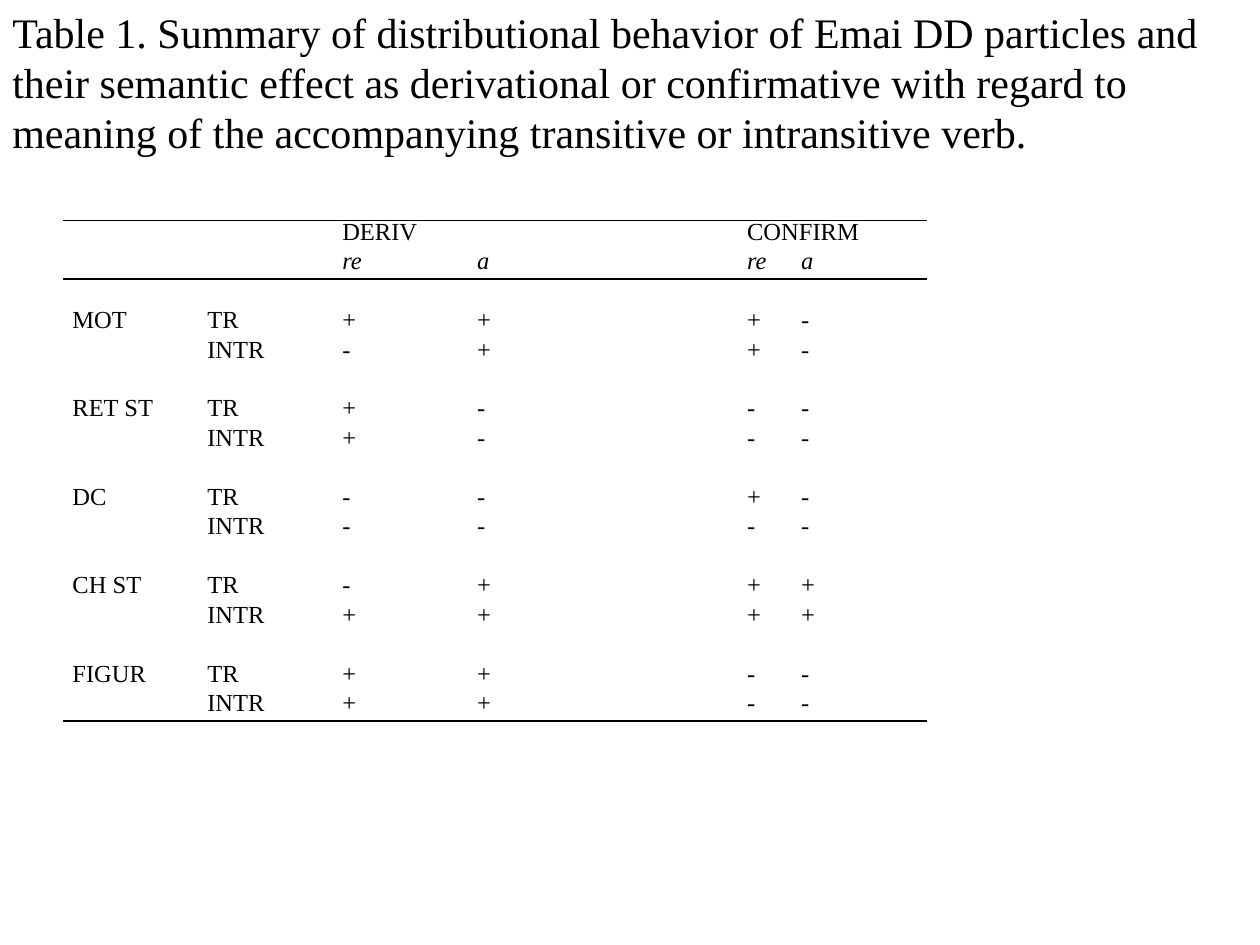
from dataclasses import dataclass

from lxml import etree
from pptx import Presentation
from pptx import util as u
from pptx.dml.color import RGBColor
from pptx.enum import text
from pptx.oxml.ns import qn


@dataclass(frozen=True)
class Theme:
    font: str = "Times New Roman"
    ink: str = "000000"
    paper: str = "FFFFFF"
    caption_size: u.Pt = u.Pt(24)
    table_size: u.Pt = u.Pt(14)
    table_spacing: float = 0.92
    rule_width: u.Pt = u.Pt(1)


@dataclass(frozen=True)
class VerbClass:
    name: str
    transitive: str    # marks in the order DERIV re, a, CONFIRM re, a
    intransitive: str


THEME = Theme()
CAPTION = (
    "Table 1. Summary of distributional behavior of Emai DD particles and "
    "their semantic effect as derivational or confirmative with regard to "
    "meaning of the accompanying transitive or intransitive verb."
)
VERB_CLASSES = [
    VerbClass("MOT", "+++-", "-++-"),
    VerbClass("RET ST", "+---", "+---"),
    VerbClass("DC", "--+-", "----"),
    VerbClass("CH ST", "-+++", "++++"),
    VerbClass("FIGUR", "++--", "++--"),
]
WIDE, NARROW, TABLE_HEIGHT = u.Cm(2.72), u.Cm(1.09), u.Cm(9.31)
COLUMN_WIDTHS = [WIDE] * 5 + [NARROW, WIDE]
NO_STYLE = "{2D5ABB26-0587-4C30-8999-92F81FD0307C}"
CELL_FORMAT = {
    "margin_left": u.Cm(0.19), "margin_right": u.Cm(0.19),
    "margin_top": 0, "margin_bottom": 0,
}


def table_rows() -> list[list[str]]:
    """Two heading rows, then a blank row and two rows for each verb class."""
    rows = [["", "", "DERIV", "", "", "CONFIRM", ""],
            ["", "", "re", "a", "", "re", "a"]]
    for verb in VERB_CLASSES:
        rows.append([""] * len(COLUMN_WIDTHS))
        for name, kind, marks in ((verb.name, "TR", verb.transitive),
                                  ("", "INTR", verb.intransitive)):
            rows.append([name, kind, *marks[:2], "", *marks[2:]])
    return rows


def write(para, words: str, size: u.Pt, italic: bool = False) -> None:
    if not words:  # an empty cell still needs the table's font and line height
        end = etree.SubElement(para._p, qn("a:endParaRPr"), sz=str(int(size.pt * 100)))
        etree.SubElement(end, qn("a:latin"), typeface=THEME.font)
        return
    span = para.add_run()
    span.text = words
    span.font.color.rgb = RGBColor.from_string(THEME.ink)
    for name, value in {"name": THEME.font, "size": size, "italic": italic}.items():
        setattr(span.font, name, value)


def rule(cell, side: str) -> None:
    """Draw a cell border; side is lnT or lnB."""
    line = etree.Element(qn(f"a:{side}"), w=str(int(THEME.rule_width)))
    fill = etree.SubElement(line, qn("a:solidFill"))
    etree.SubElement(fill, qn("a:srgbClr"), val=THEME.ink)
    cell._tc.get_or_add_tcPr().insert(0, line)


def add_caption(page) -> None:
    box = page.shapes.add_textbox(0, 0, u.Cm(25.4), u.Cm(19.05))
    frame = box.text_frame
    for name, value in {"word_wrap": True,
                        "vertical_anchor": text.MSO_ANCHOR.TOP}.items():
        setattr(frame, name, value)
    write(frame.paragraphs[0], CAPTION, THEME.caption_size)


def add_summary(page) -> None:
    rows = table_rows()
    holder = page.shapes.add_table(
        len(rows), len(COLUMN_WIDTHS), u.Cm(1.27), u.Cm(4.44),
        sum(COLUMN_WIDTHS), TABLE_HEIGHT)
    table = holder.table
    table.first_row = table.horz_banding = False
    next(table._tbl.iter(qn("a:tableStyleId"))).text = NO_STYLE
    for column, width in zip(table.columns, COLUMN_WIDTHS):
        column.width = width

    # Rules above and below the heading, and under the last row
    borders = {0: "lnT", 1: "lnB", len(rows) - 1: "lnB"}
    for r, words_in_row in enumerate(rows):
        table.rows[r].height = TABLE_HEIGHT // len(rows)
        for c, words in enumerate(words_in_row):
            cell = table.cell(r, c)
            for name, value in CELL_FORMAT.items():
                setattr(cell, name, value)
            cell.fill.background()
            para = cell.text_frame.paragraphs[0]
            para.line_spacing = THEME.table_spacing
            write(para, words, THEME.table_size, r == 1)
            if r in borders:
                rule(cell, borders[r])

    # DERIV and CONFIRM each head two columns
    for c in (2, 5):
        table.cell(0, c).merge(table.cell(0, c + 1))


def main() -> None:
    deck = Presentation()
    deck.slide_width, deck.slide_height = u.Cm(25.4), u.Cm(19.05)
    page = deck.slides.add_slide(deck.slide_layouts[6])
    background = page.background.fill
    background.solid()
    background.fore_color.rgb = RGBColor.from_string(THEME.paper)
    add_caption(page)
    add_summary(page)
    deck.save("out.pptx")


if __name__ == "__main__":
    main()
